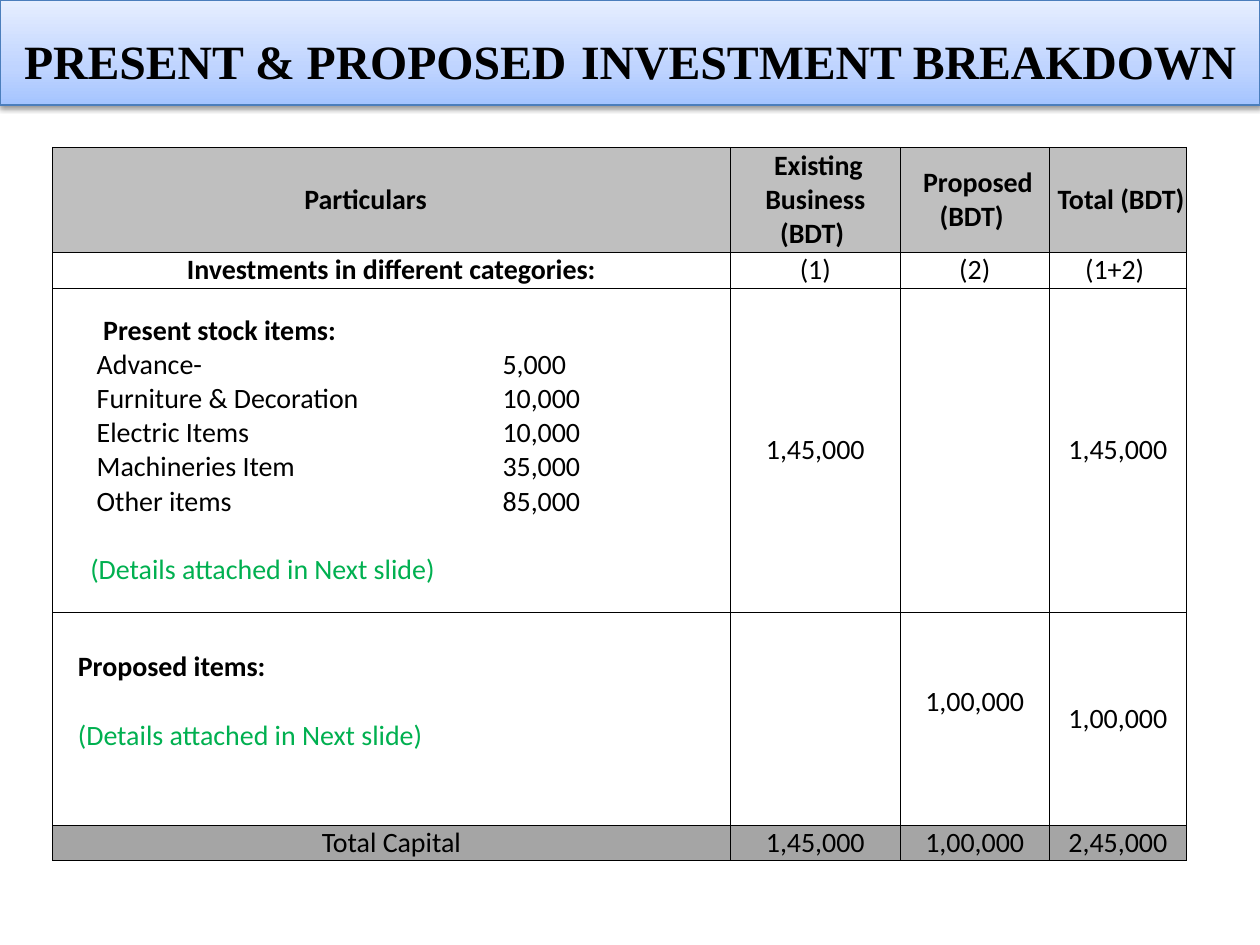
from lxml import etree
from pptx import Presentation
from pptx.dml.color import RGBColor
from pptx.enum.shapes import MSO_SHAPE as Shape
from pptx.enum.text import MSO_ANCHOR as Anchor, PP_ALIGN as Align
from pptx.oxml import parse_xml
from pptx.oxml.ns import nsdecls, qn
from pptx.util import Cm, Pt

BLACK, GREEN = "000000", "00B050"
HEADER_GREY, TOTAL_GREY = "BFBFBF", "A5A5A5"
NOTE = "(Details attached in Next slide)"
LINE_HEIGHT = 19.5


def rgb(code):
    return RGBColor.from_string(code)


class InvestmentSlide:
    body_font, body_size = "Calibri", 16

    def __init__(self, deck):
        self.page = deck.slides.add_slide(deck.slide_layouts[6])

    def style(self, font, name, size, color=BLACK, bold=False):
        font.name, font.size, font.bold = name, Pt(size), bold
        font.color.rgb = rgb(color)

    def banner(self, width, height, spans):
        """Title bar with a vertical gradient and a soft shadow below it."""
        box = self.page.shapes.add_shape(Shape.RECTANGLE, 0, 0, width, height)
        box.line.color.rgb = rgb("4B7EBC")
        box.line.width = Pt(0.75)
        stops = "".join(
            f'<a:gs pos="{place * 1000}"><a:srgbClr val="{color}"/></a:gs>'
            for place, color in ((0, "A4C4FF"), (35, "BFD4FF"), (100, "E6EEFF")))
        properties = box._element.spPr
        properties.find(qn("a:ln")).addprevious(parse_xml(
            f'<a:gradFill {nsdecls("a")} rotWithShape="1"><a:gsLst>{stops}</a:gsLst>'
            '<a:lin ang="16200000" scaled="0"/></a:gradFill>'))
        properties.append(parse_xml(
            f'<a:effectLst {nsdecls("a")}><a:outerShdw blurRad="{Pt(3.1)}" '
            f'dist="{Pt(1.6)}" dir="5400000" rotWithShape="0">'
            f'<a:srgbClr val="{BLACK}"><a:alpha val="38000"/></a:srgbClr>'
            '</a:outerShdw></a:effectLst>'))
        frame = box.text_frame
        frame.word_wrap = True
        frame.vertical_anchor = Anchor.MIDDLE
        para = frame.paragraphs[0]
        para.alignment = Align.CENTER
        for text, name, size in spans:
            span = para.add_run()
            span.text = text
            self.style(span.font, name, size, bold=True)

    def table(self, left, top, widths, heights):
        table = self.page.shapes.add_table(
            len(heights), len(widths), left, top, sum(widths), sum(heights)).table
        table.first_row = table.horz_banding = False
        for column, width in zip(table.columns, widths):
            column.width = width
        for row, height in zip(table.rows, heights):
            row.height = height
        for cell in table.iter_cells():
            cell.fill.background()
            cell.vertical_anchor = Anchor.MIDDLE
            cell.margin_left = cell.margin_right = 0
            cell.margin_top = cell.margin_bottom = 0
            self.borders(cell)
        return table

    def borders(self, cell):
        properties = cell._tc.get_or_add_tcPr()
        for index, side in enumerate(("lnL", "lnR", "lnT", "lnB")):
            properties.insert(index, parse_xml(
                f'<a:{side} {nsdecls("a")} w="{Pt(0.5)}"><a:solidFill>'
                f'<a:srgbClr val="{BLACK}"/></a:solidFill></a:{side}>'))

    def fill(self, cell, color):
        cell.fill.solid()
        cell.fill.fore_color.rgb = rgb(color)

    def centred(self, cell, text, bold=False):
        para = cell.text_frame.paragraphs[0]
        para.text = text
        para.alignment = Align.CENTER
        self.style(para.font, self.body_font, self.body_size, bold=bold)

    def listing(self, cell, lines, amount_tab=None):
        """Left-aligned lines of (text, indent, space before, colour, bold)."""
        frame = cell.text_frame
        for index, (text, indent, before, color, bold) in enumerate(lines):
            para = frame.add_paragraph() if index else frame.paragraphs[0]
            para.text = text
            properties = para._p.get_or_add_pPr()
            properties.set("marL", str(indent))
            if "\t" in text:
                tabs = etree.SubElement(properties, qn("a:tabLst"))
                etree.SubElement(tabs, qn("a:tab"), pos=str(amount_tab), algn="l")
            if before:
                para.space_before = Pt(before)
            self.style(para.font, self.body_font, self.body_size, color, bold)


def main():
    deck = Presentation()
    deck.slide_width, deck.slide_height = Cm(25.4), Cm(19.05)
    slide = InvestmentSlide(deck)

    table = slide.table(
        Cm(1.06), Cm(2.97),
        [Cm(width) for width in (13.66, 3.43, 3, 2.77)],
        [Cm(height) for height in (2.12, 0.72, 6.53, 4.29, 0.72)])
    rows = [
        ["Particulars", " Existing Business (BDT) ", " Proposed (BDT) ", " Total (BDT)"],
        ["Investments in different categories:", "(1)", "(2)", "(1+2) "],
        ["", "1,45,000", "", "1,45,000"],
        ["", "", "1,00,000", "1,00,000"],
        ["Total Capital", "1,45,000", "1,00,000", "2,45,000"],
    ]
    for r, texts in enumerate(rows):
        for c, text in enumerate(texts):
            cell = table.cell(r, c)
            if text:
                slide.centred(cell, text, bold=r == 0 or (r, c) == (1, 0))
            if r in (0, 4):
                slide.fill(cell, HEADER_GREY if r == 0 else TOTAL_GREY)
    table.cell(0, 0).margin_right = Cm(1.04)
    table.cell(1, 0).vertical_anchor = Anchor.TOP

    stock = [("Advance-", "5,000"), ("Furniture & Decoration", "10,000"),
             ("Electric Items", "10,000"), ("Machineries Item", "35,000"),
             ("Other items", "85,000")]
    present, proposed = table.cell(2, 0), table.cell(3, 0)
    present.margin_left = Cm(0.76)
    slide.listing(
        present,
        [("Present stock items:", Cm(0.26), 0, BLACK, True)]
        + [(f"{item}\t{amount}", Cm(0.13), 0, BLACK, False) for item, amount in stock]
        + [(NOTE, 0, LINE_HEIGHT, GREEN, False)],
        amount_tab=Cm(8.18))
    proposed.margin_left = Cm(0.51)
    proposed.margin_bottom = table.cell(3, 2).margin_bottom = Cm(0.69)
    slide.listing(proposed, [("Proposed items:", 0, 0, BLACK, True),
                             (NOTE, 0, LINE_HEIGHT, GREEN, False)])

    slide.banner(deck.slide_width, Cm(2.12), [
        ("PRESENT & PROPOSED", "Times New Roman", 27.3),
        (" ", "Cambria", 39),
        ("INVESTMENT BREAKDOWN", "Times New Roman", 27.3)])
    deck.save("out.pptx")


if __name__ == "__main__":
    main()
